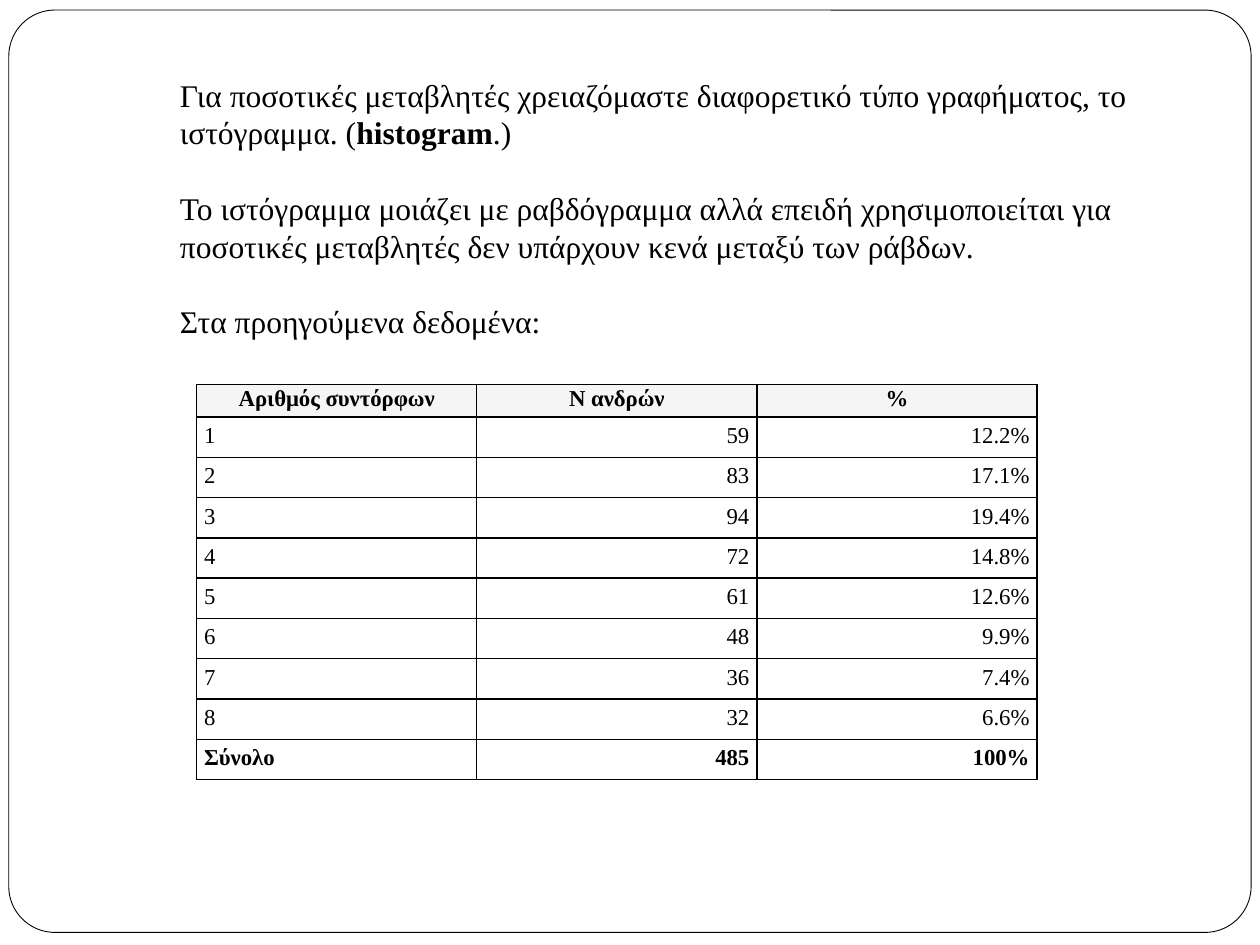
import pptx
import pptx.dml.color
import pptx.enum.shapes
import pptx.enum.text
import pptx.oxml
import pptx.oxml.ns
import pptx.util
from pptx.util import Inches, Pt

FONT = "Times New Roman"
BLACK, WHITE, HEADER_FILL = "000000", "FFFFFF", "F5F5F5"
ALIGN = pptx.enum.text.PP_ALIGN

PARAGRAPHS = [
    [("Για ποσοτικές μεταβλητές χρειαζόμαστε διαφορετικό τύπο γραφήματος, "
      "το ιστόγραμμα. (", False), ("histogram", True), (".)", False)],
    [("Το ιστόγραμμα μοιάζει με ραβδόγραμμα αλλά επειδή χρησιμοποιείται για "
      "ποσοτικές μεταβλητές δεν υπάρχουν κενά μεταξύ των ράβδων.", False)],
    [("Στα προηγούμενα δεδομένα:", False)],
]
ROWS = [
    ("Αριθμός συντόρφων", "Ν ανδρών", "%"),
    ("1", "59", "12.2%"),
    ("2", "83", "17.1%"),
    ("3", "94", "19.4%"),
    ("4", "72", "14.8%"),
    ("5", "61", "12.6%"),
    ("6", "48", "9.9%"),
    ("7", "36", "7.4%"),
    ("8", "32", "6.6%"),
    ("Σύνολο", "485", "100%"),
]


def rgb(color):
    return pptx.dml.color.RGBColor.from_string(color)


def set_fill(obj, color):
    obj.fill.solid()
    obj.fill.fore_color.rgb = rgb(color)


def set_font(p, size, bold=None):
    p.font.name = FONT
    p.font.size = Pt(size)
    p.font.bold = bold
    p.font.color.rgb = rgb(BLACK)


def add_frame(slide, x, y, w, h):
    sp = slide.shapes.add_shape(
        pptx.enum.shapes.MSO_SHAPE.ROUNDED_RECTANGLE,
        Inches(x), Inches(y), Inches(w), Inches(h))
    sp.adjustments[0] = 0.05
    sp.shadow.inherit = False
    set_fill(sp, WHITE)
    sp.line.color.rgb = rgb(BLACK)
    sp.line.width = Pt(0.5)


def add_body(slide, x, y, w, h):
    sp = slide.shapes.add_textbox(Inches(x), Inches(y), Inches(w), Inches(h))
    tf = sp.text_frame
    tf.word_wrap = True
    for i, runs in enumerate(PARAGRAPHS):
        p = tf.add_paragraph() if i else tf.paragraphs[0]
        set_font(p, 18)
        p.line_spacing = Pt(21.6)
        p.space_before = Pt(21.6 if i else 0)
        for text, bold in runs:
            r = p.add_run()
            r.text = text
            if bold:
                r.font.bold = True


def set_borders(cell, color, width):
    tc_pr = cell._tc.get_or_add_tcPr()
    for i, side in enumerate(("lnL", "lnR", "lnT", "lnB")):
        tc_pr.insert(i, pptx.oxml.parse_xml(
            f'<a:{side} {pptx.oxml.ns.nsdecls("a")} w="{Pt(width)}">'
            f'<a:solidFill><a:srgbClr val="{color}"/></a:solidFill></a:{side}>'))


def add_frequency_table(slide, x, y, w, header_h, row_h):
    n_rows, n_cols = len(ROWS), len(ROWS[0])
    h = header_h + row_h * (n_rows - 1)
    table = slide.shapes.add_table(
        n_rows, n_cols, Inches(x), Inches(y), Inches(w), Inches(h)).table
    for col in table.columns:
        col.width = Inches(w / n_cols)
    for i, values in enumerate(ROWS):
        header = i == 0
        table.rows[i].height = Inches(header_h if header else row_h)
        for j, text in enumerate(values):
            cell = table.cell(i, j)
            cell.text = text
            cell.margin_left = cell.margin_right = Inches(0.02 if header else 0.06)
            cell.margin_top = cell.margin_bottom = Inches(0.02 if header else 0.05)
            p = cell.text_frame.paragraphs[0]
            set_font(p, 13, header or i == n_rows - 1)
            p.alignment = ALIGN.CENTER if header else ALIGN.RIGHT if j else ALIGN.LEFT
            set_fill(cell, HEADER_FILL if header else WHITE)
            set_borders(cell, BLACK, 1)


def main():
    prs = pptx.Presentation()
    prs.slide_width, prs.slide_height = Inches(10), Inches(7.5)
    slide = prs.slides.add_slide(prs.slide_layouts[6])
    add_frame(slide, 0.07, 0.08, 9.86, 7.32)
    add_body(slide, 1.33, 0.55, 7.97, 2.22)
    add_frequency_table(slide, 1.56, 3.05, 6.67, 0.26, 0.32)
    prs.save("out.pptx")


if __name__ == "__main__":
    main()
